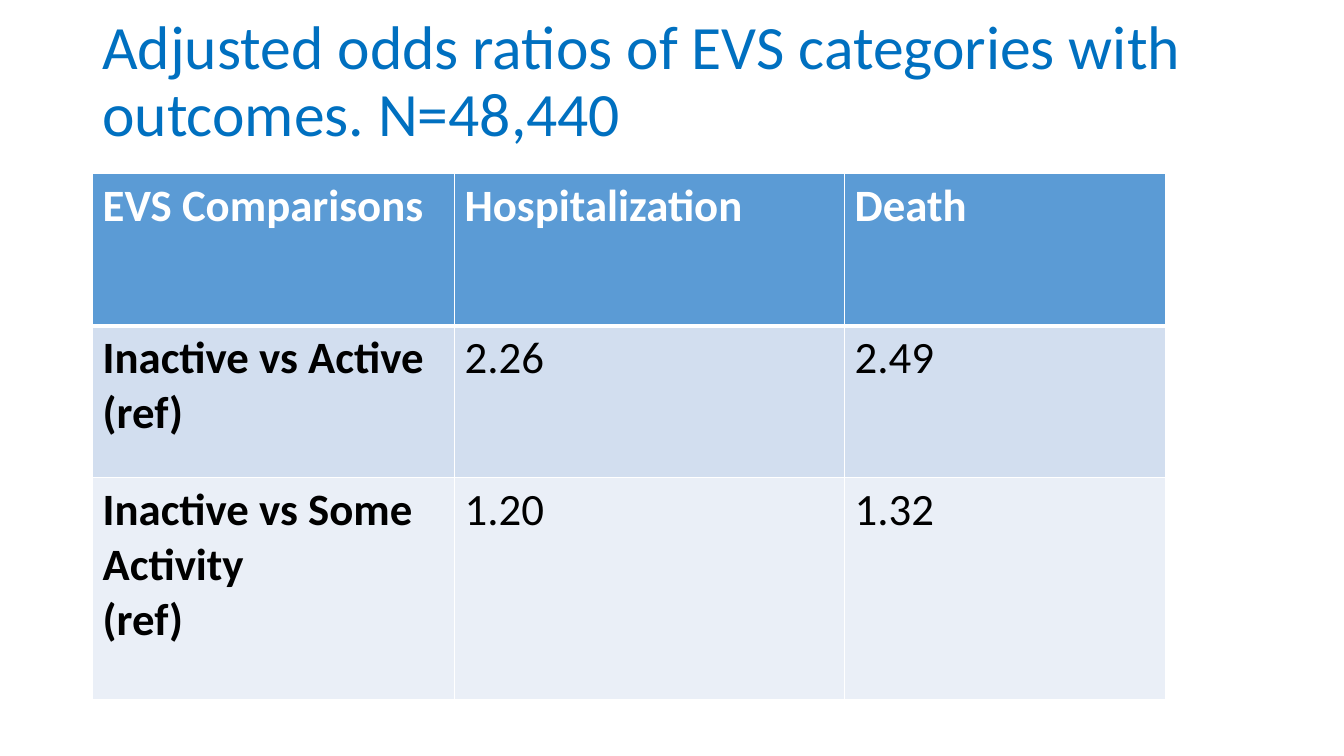
"""Build a slide with a table of adjusted odds ratios by EVS category."""
import pptx
import pptx.dml.color
import pptx.enum.text
import pptx.oxml
import pptx.oxml.ns
import pptx.util

Pt = pptx.util.Pt
WHITE = pptx.dml.color.RGBColor(0xFF, 0xFF, 0xFF)
BLACK = pptx.dml.color.RGBColor(0x00, 0x00, 0x00)
TITLE_BLUE = pptx.dml.color.RGBColor(0x00, 0x70, 0xC0)
HEADER_BLUE = pptx.dml.color.RGBColor(0x5B, 0x9B, 0xD5)
BAND_DARK = pptx.dml.color.RGBColor(0xD2, 0xDE, 0xEF)
BAND_LIGHT = pptx.dml.color.RGBColor(0xEA, 0xEF, 0xF7)

COLUMN_WIDTHS = [258.5, 278.6, 229.3]
ROW_HEIGHTS = [108.7, 108.7, 158.6]
ROW_FILLS = [HEADER_BLUE, BAND_DARK, BAND_LIGHT]
ODDS_RATIOS = [
    ["EVS Comparisons", "Hospitalization", "Death"],
    ["Inactive vs Active (ref)", "2.26", "2.49"],
    ["Inactive vs Some Activity\n(ref)", "1.20", "1.32"],
]


def write_text(frame, text, size, color, bold=False, line_spacing=None):
    frame.text = text
    for paragraph in frame.paragraphs:
        paragraph.line_spacing = line_spacing
        for run in paragraph.runs:
            run.font.name = "Calibri"
            run.font.size = Pt(size)
            run.font.bold = bold
            run.font.color.rgb = color


def add_border(cell, side, width):
    cell_properties = cell._tc.get_or_add_tcPr()
    cell_properties.append(pptx.oxml.parse_xml(
        f'<a:ln{side} {pptx.oxml.ns.nsdecls("a")} w="{Pt(width)}">'
        f'<a:solidFill><a:srgbClr val="{WHITE}"/></a:solidFill></a:ln{side}>'))


deck = pptx.Presentation()
deck.slide_width = Pt(960)
deck.slide_height = Pt(540)
slide = deck.slides.add_slide(deck.slide_layouts[6])

title = slide.shapes.add_textbox(Pt(66), Pt(7.2), Pt(828), Pt(104.4)).text_frame
title.word_wrap = True
title.vertical_anchor = pptx.enum.text.MSO_ANCHOR.MIDDLE
write_text(title, "Adjusted odds ratios of EVS categories with outcomes. N=48,440",
           size=44, color=TITLE_BLUE, line_spacing=0.9)

odds_table = slide.shapes.add_table(
    len(ROW_HEIGHTS), len(COLUMN_WIDTHS), Pt(66.2), Pt(124),
    Pt(sum(COLUMN_WIDTHS)), Pt(sum(ROW_HEIGHTS))).table
for column, width in zip(odds_table.columns, COLUMN_WIDTHS):
    column.width = Pt(width)

for row_index, (row, height) in enumerate(zip(odds_table.rows, ROW_HEIGHTS)):
    row.height = Pt(height)
    is_header = row_index == 0
    for column_index, cell in enumerate(row.cells):
        write_text(cell.text_frame, ODDS_RATIOS[row_index][column_index], size=32,
                   color=WHITE if is_header else BLACK,
                   bold=is_header or column_index == 0)
        add_border(cell, "L", 1)
        add_border(cell, "R", 1)
        add_border(cell, "T", 3 if row_index == 1 else 1)
        add_border(cell, "B", 3 if is_header else 1)
        cell.fill.solid()
        cell.fill.fore_color.rgb = ROW_FILLS[row_index]

deck.save("out.pptx")
